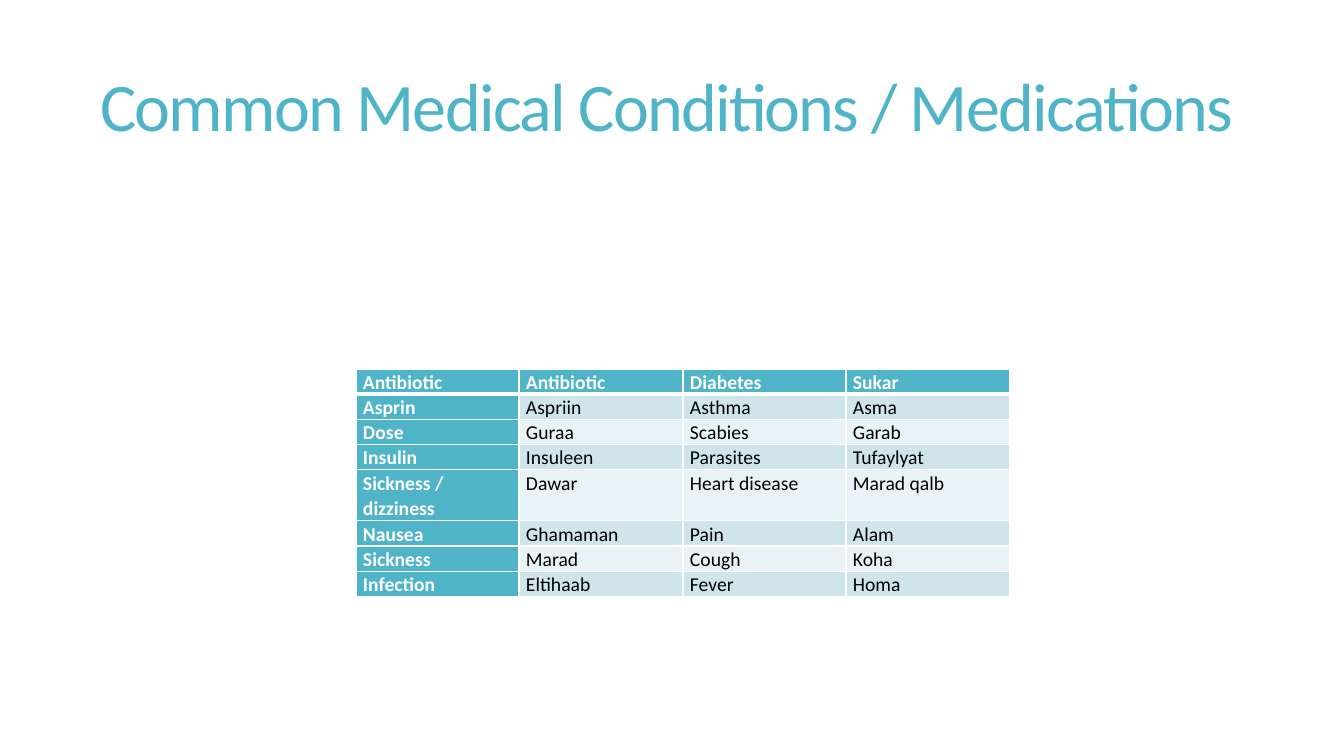
"""Build a slide with a table of common medical conditions and medications."""
from lxml.etree import SubElement
from pptx import Presentation
from pptx.dml.color import RGBColor
from pptx.enum.text import MSO_ANCHOR, PP_ALIGN
from pptx.oxml.ns import qn
from pptx.util import Pt

EMU_PER_PX = 914400 / 100.8
FONT = "Calibri"
COLORS = {"teal": "50B4C8", "band": "D0E5EB", "pale": "E9F2F5",
          "white": "FFFFFF", "black": "000000"}
TERMS = [
    ("Antibiotic", "Antibiotic", "Diabetes", "Sukar"),
    ("Asprin", "Aspriin", "Asthma", "Asma"),
    ("Dose", "Guraa", "Scabies", "Garab"),
    ("Insulin", "Insuleen", "Parasites", "Tufaylyat"),
    ("Sickness / dizziness", "Dawar", "Heart disease", "Marad qalb"),
    ("Nausea", "Ghamaman", "Pain", "Alam"),
    ("Sickness", "Marad", "Cough", "Koha"),
    ("Infection", "Eltihaab", "Fever", "Homa"),
]
COLUMN_WIDTHS = [163, 164, 163, 164]
ROW_HEIGHTS = [25, 25, 25, 25, 51, 25, 25, 25]


def px(length):
    return round(length * EMU_PER_PX)


def write(para, text, size, color, bold=False):
    para.text = text
    para.font.name = FONT
    para.font.size = Pt(size)
    para.font.bold = bold
    para.font.color.rgb = RGBColor.from_string(COLORS[color])


deck = Presentation()
deck.slide_width, deck.slide_height = px(1344), px(756)
page = deck.slides.add_slide(deck.slide_layouts[6])

title = page.shapes.add_textbox(px(73), px(55), px(1187), px(182)).text_frame
title.word_wrap = True
title.vertical_anchor = MSO_ANCHOR.TOP
title.margin_top = px(21)
heading = title.paragraphs[0]
write(heading, "Common Medical Conditions / Medications", 48.6, "teal")
heading.alignment = PP_ALIGN.CENTER
heading.line_spacing = 0.85
heading.runs[0].font._element.set("spc", "-120")

table = page.shapes.add_table(len(TERMS), len(COLUMN_WIDTHS), px(356), px(369),
                              px(sum(COLUMN_WIDTHS)), px(sum(ROW_HEIGHTS))).table
table.first_col = True
for column, width in zip(table.columns, COLUMN_WIDTHS):
    column.width = px(width)

for row_index, terms in enumerate(TERMS):
    table.rows[row_index].height = px(ROW_HEIGHTS[row_index])
    for column_index, term in enumerate(terms):
        cell = table.cell(row_index, column_index)
        is_header = row_index == 0 or column_index == 0
        cell.margin_left = cell.margin_right = px(7)
        cell.margin_top = cell.margin_bottom = 0

        para = cell.text_frame.paragraphs[0]
        write(para, term, 14, "white" if is_header else "black", is_header)
        para.line_spacing = 1.07

        properties = cell._tc.get_or_add_tcPr()
        for side in "LRTB":
            under_header = (row_index, side) in [(0, "B"), (1, "T")]
            border = SubElement(properties, qn(f"a:ln{side}"),
                                w=str(Pt(3 if under_header else 1)))
            SubElement(SubElement(border, qn("a:solidFill")),
                       qn("a:srgbClr"), val=COLORS["white"])
        cell.fill.solid()
        shade = "teal" if is_header else "band" if row_index % 2 else "pale"
        cell.fill.fore_color.rgb = RGBColor.from_string(COLORS[shade])

deck.save("out.pptx")
